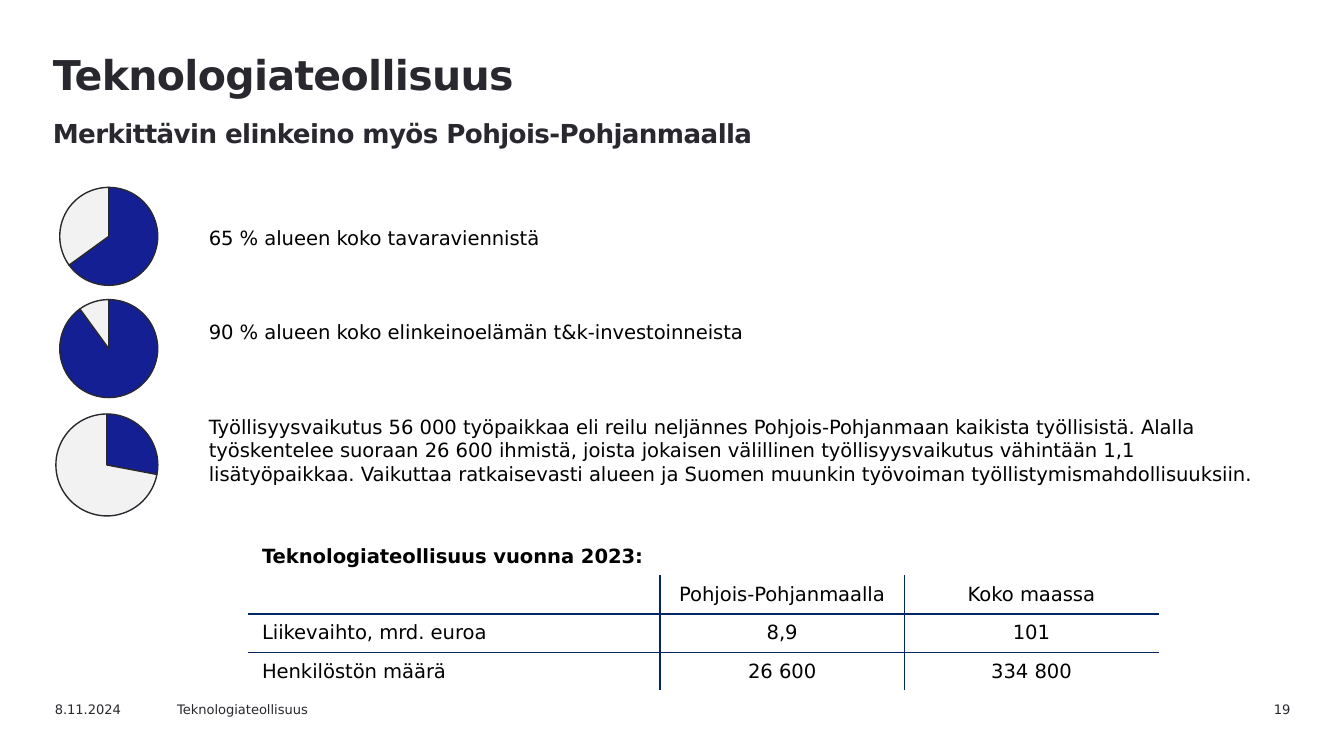
from dataclasses import dataclass
from lxml.etree import SubElement
from pptx import Presentation
from pptx.chart.data import CategoryChartData
from pptx.dml.color import RGBColor
from pptx.enum.chart import XL_CHART_TYPE
from pptx.enum.text import MSO_ANCHOR, PP_ALIGN
from pptx.oxml import parse_xml
from pptx.oxml.ns import nsdecls, qn
from pptx.util import Inches, Pt


@dataclass(frozen=True)
class Theme:
    font: str = "DejaVu Sans"
    ink: str = "29282E"
    black: str = "000000"
    share: str = "141F94"
    rest: str = "F2F2F2"
    rule: str = "002664"
    title: float = 22
    subtitle: float = 14
    body: float = 10.5
    footer: float = 7


theme = Theme()
CELL = Inches(0.1)  # square grid: 100 columns by 56.25 rows


def at(*cells):
    return [round(CELL * count) for count in cells]


def write(para, text, size, color, bold=False):
    span = para.add_run()
    span.text = text
    span.font.name = theme.font
    span.font.size = Pt(size)
    span.font.bold = bold
    span.font.color.rgb = RGBColor.from_string(color)
    return span


deck = Presentation()
deck.slide_width, deck.slide_height = at(100, 56.25)
page = deck.slides.add_slide(deck.slide_layouts[6])

# Title and subtitle
box = page.shapes.add_textbox(*at(2.95, 3.1, 87.4, 7.1))
frame = box.text_frame
frame.word_wrap = True
para = frame.paragraphs[0]
para.line_spacing = Pt(27)
headings = [
    ("Teknologiateollisuus", theme.title),
    ("Merkittävin elinkeino myös Pohjois-Pohjanmaalla", theme.subtitle),
]
for index, (text, size) in enumerate(headings):
    if index:
        para.add_line_break()
    span = write(para, text, size, theme.ink, bold=True)
    span.font._element.set("spc", "-33")

# Footer: date, name, page number
footers = [
    (3.1, 10, "8.11.2024", PP_ALIGN.LEFT),
    (12.2, 14.2, "Teknologiateollisuus", PP_ALIGN.LEFT),
    (87.6, 9.4, "19", PP_ALIGN.RIGHT),
]
for left, width, text, align in footers:
    box = page.shapes.add_textbox(*at(left, 51.9, width, 1.8))
    frame = box.text_frame
    frame.word_wrap = True
    frame.margin_top = frame.margin_bottom = 0
    frame.vertical_anchor = MSO_ANCHOR.MIDDLE
    frame.paragraphs[0].alignment = align
    write(frame.paragraphs[0], text, theme.footer, theme.ink)

# Statements beside the pies
statements = [
    "65 % alueen koko tavaraviennistä",
    "90 % alueen koko elinkeinoelämän t&k-investoinneista",
    "Työllisyysvaikutus 56 000 työpaikkaa eli reilu neljännes Pohjois-Pohjanmaan "
    "kaikista työllisistä. Alalla työskentelee suoraan 26 600 ihmistä, joista jokaisen "
    "välillinen työllisyysvaikutus vähintään 1,1 lisätyöpaikkaa. Vaikuttaa ratkaisevasti "
    "alueen ja Suomen muunkin työvoiman työllistymismahdollisuuksiin.",
]
box = page.shapes.add_textbox(*at(14.55, 16.3, 81.9, 24.2))
frame = box.text_frame
frame.word_wrap = True
for index, text in enumerate(statements):
    para = frame.add_paragraph() if index else frame.paragraphs[0]
    if index:
        para.space_before = Pt(38)
    write(para, text, theme.body, theme.black)

# Pies: percentage, left, top, side
for percent, left, top, side in [(65, 3.1, 12.6, 10), (90, 3.1, 20.95, 10), (28, 2.75, 29.4, 10.4)]:
    data = CategoryChartData()
    data.categories = ["1", "2"]
    data.add_series("Series 1", (percent, 100 - percent))
    chart = page.shapes.add_chart(XL_CHART_TYPE.PIE, *at(left, top, side, side), data).chart
    chart.has_legend = False
    chart.has_title = False
    chart.font.name = theme.font
    chart.font.size = Pt(18)
    chart.font.color.rgb = RGBColor.from_string(theme.ink)
    plot = chart.plots[0]
    plot.vary_by_categories = True
    for index, color in enumerate((theme.share, theme.rest)):
        look = plot.series[0].points[index].format
        look.fill.solid()
        look.fill.fore_color.rgb = RGBColor.from_string(color)
        look.line.color.rgb = RGBColor.from_string(theme.ink)
        look.line.width = Pt(0.75)
    # Centre the circle in its frame
    area = chart._chartSpace.chart.plotArea
    for old in area.findall(qn("c:layout")):
        area.remove(old)
    layout = parse_xml(f"<c:layout {nsdecls('c')}><c:manualLayout/></c:layout>")
    area.insert(0, layout)
    settings = [("layoutTarget", "inner"), ("xMode", "edge"), ("yMode", "edge"),
                ("x", "0.135"), ("y", "0.135"), ("w", "0.73"), ("h", "0.73")]
    for name, value in settings:
        SubElement(layout[0], qn(f"c:{name}")).set("val", value)

# Key figures table
rows = [
    ["Teknologiateollisuus vuonna 2023:", "", ""],
    ["", "Pohjois-Pohjanmaalla", "Koko maassa"],
    ["Liikevaihto, mrd. euroa", "8,9", "101"],
    ["Henkilöstön määrä", "26 600", "334 800"],
]
table = page.shapes.add_table(4, 3, *at(18.5, 40, 67.7, 11.4)).table
table.first_row = table.horz_banding = False
for column, width in zip(table.columns, at(30.6, 18.2, 18.9)):
    column.width = width
for row in table.rows:
    row.height = at(2.85)[0]
table.cell(0, 0).merge(table.cell(0, 2))
for r, texts in enumerate(rows):
    for c, text in enumerate(texts):
        cell = table.cell(r, c)
        cell.fill.background()
        cell.vertical_anchor = MSO_ANCHOR.MIDDLE
        para = cell.text_frame.paragraphs[0]
        para.alignment = PP_ALIGN.CENTER if c else PP_ALIGN.LEFT
        if text:
            write(para, text, theme.body, theme.black, bold=r == 0)
        else:
            SubElement(para._p, qn("a:endParaRPr")).set("sz", str(round(theme.body * 100)))
        # Only inner rules, below the heading row
        inner = {"L": r and c > 0, "R": r and c < 2, "T": r > 1, "B": 0 < r < 3}
        sides = [side for side, shown in inner.items() if shown]
        for index, side in enumerate(sides):
            cell._tc.get_or_add_tcPr().insert(index, parse_xml(
                f'<a:ln{side} {nsdecls("a")} w="{Pt(1)}"><a:solidFill>'
                f'<a:srgbClr val="{theme.rule}"/></a:solidFill></a:ln{side}>'))

deck.save("out.pptx")
